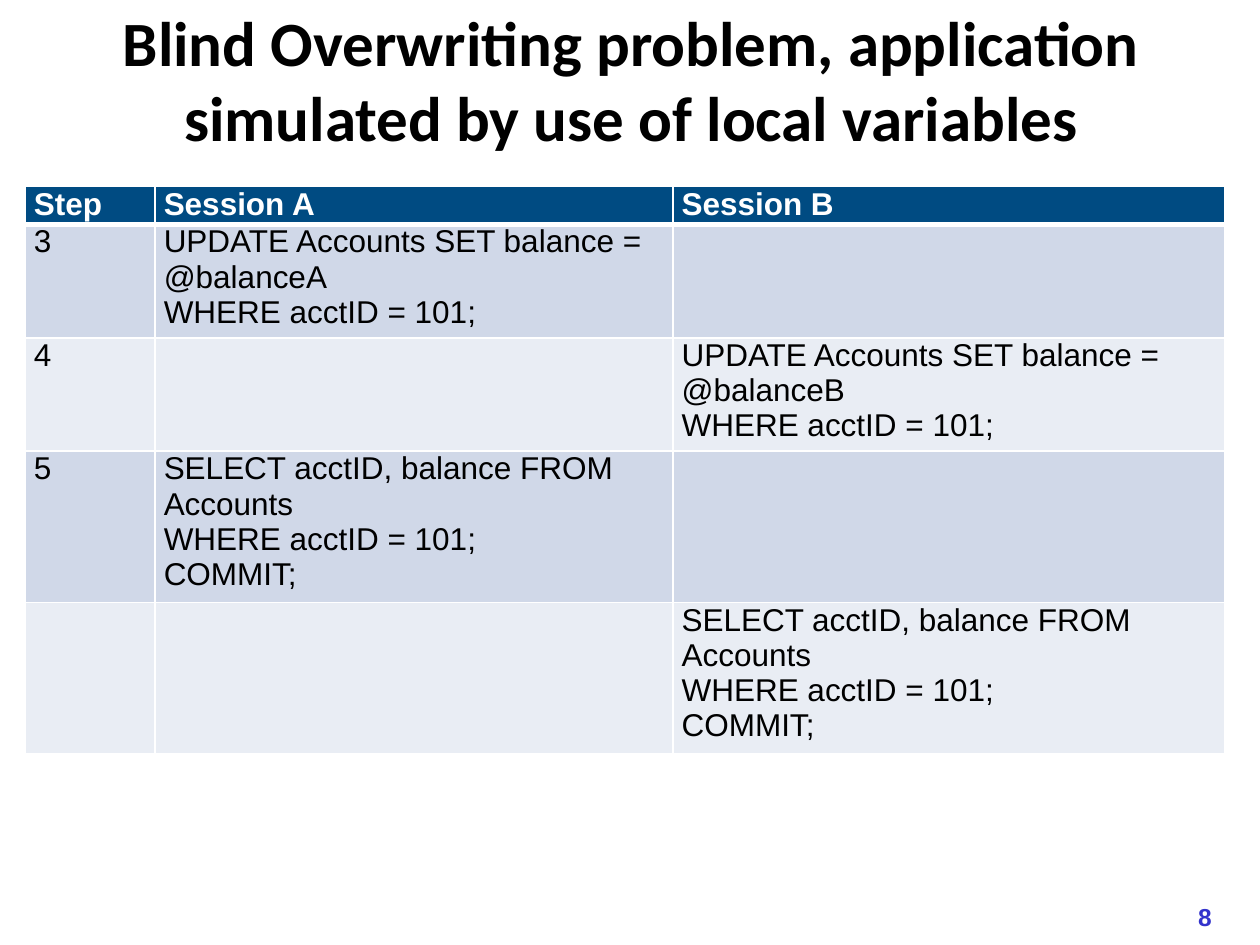
import pptx
import pptx.dml.color
import pptx.enum.text
import pptx.oxml.ns
import pptx.util
import lxml.etree

Inches = pptx.util.Inches
RGBColor = pptx.dml.color.RGBColor
Alignment = pptx.enum.text.PP_ALIGN

BLACK = RGBColor(0x00, 0x00, 0x00)
WHITE = RGBColor(0xFF, 0xFF, 0xFF)
NUMBER_BLUE = RGBColor(0x33, 0x33, 0xCC)
HEADER_BLUE = RGBColor(0x00, 0x4B, 0x82)
BAND_COLORS = (RGBColor(0xE9, 0xED, 0xF4), RGBColor(0xD0, 0xD8, 0xE8))

COLUMN_WIDTHS = (1.03, 4.11, 4.38)
LINE_HEIGHT = 0.28
ROW_LINES = (1, 3, 3, 4, 4)

UPDATE = "UPDATE Accounts SET balance = @balance{}\nWHERE acctID = 101;"
SELECT = "SELECT acctID, balance FROM Accounts\nWHERE acctID = 101;\nCOMMIT;"
ROWS = (
    ("Step", "Session A", "Session B"),
    ("3", UPDATE.format("A"), ""),
    ("4", "", UPDATE.format("B")),
    ("5", SELECT, ""),
    ("", "", SELECT),
)


def format_runs(paragraph, name, size, color, bold):
    for run in paragraph.runs:
        run.font.name = name
        run.font.size = pptx.util.Pt(size)
        run.font.color.rgb = color
        run.font.bold = bold


def set_box(shape, left, top, width, height):
    shape.left, shape.top = Inches(left), Inches(top)
    shape.width, shape.height = Inches(width), Inches(height)


def add_title(slide, box):
    title = slide.shapes.title
    set_box(title, *box)
    frame = title.text_frame
    frame.text = "Blind Overwriting problem, application simulated by use of local variables"
    frame.auto_size = pptx.enum.text.MSO_AUTO_SIZE.NONE
    frame.vertical_anchor = pptx.enum.text.MSO_ANCHOR.MIDDLE
    paragraph = frame.paragraphs[0]
    paragraph.alignment = Alignment.CENTER
    format_runs(paragraph, "Calibri", 36, BLACK, True)


def add_page_number(slide, box):
    frame = slide.shapes.add_textbox(*map(Inches, box)).text_frame
    frame.text = "8"
    frame.word_wrap = False
    frame.auto_size = pptx.enum.text.MSO_AUTO_SIZE.SHAPE_TO_FIT_TEXT
    format_runs(frame.paragraphs[0], "Arial", 14, NUMBER_BLUE, True)


def set_borders(cell, is_header):
    properties = cell._tc.get_or_add_tcPr()
    for position, side in enumerate("LRTB"):
        points = 3 if is_header and side == "B" else 1
        line = lxml.etree.Element(pptx.oxml.ns.qn("a:ln" + side), w=str(pptx.util.Pt(points)))
        fill = lxml.etree.SubElement(line, pptx.oxml.ns.qn("a:solidFill"))
        lxml.etree.SubElement(fill, pptx.oxml.ns.qn("a:srgbClr"), val=str(WHITE))
        properties.insert(position, line)


def fill_cell(cell, text, row_index):
    is_header = row_index == 0
    cell.margin_left = cell.margin_right = Inches(0.07)
    cell.margin_top = cell.margin_bottom = 0
    cell.fill.solid()
    cell.fill.fore_color.rgb = HEADER_BLUE if is_header else BAND_COLORS[row_index % 2]
    set_borders(cell, is_header)
    cell.text_frame.text = text
    paragraphs = cell.text_frame.paragraphs
    for paragraph in paragraphs:
        format_runs(paragraph, "Arial", 18, WHITE if is_header else BLACK, is_header)
    if text and not is_header:
        paragraphs[-1].alignment = Alignment.JUSTIFY


def add_session_table(slide, box):
    table = slide.shapes.add_table(len(ROWS), len(COLUMN_WIDTHS), *map(Inches, box)).table
    for column, width in zip(table.columns, COLUMN_WIDTHS):
        column.width = Inches(width)
    for row_index, (row, lines, texts) in enumerate(zip(table.rows, ROW_LINES, ROWS)):
        row.height = Inches(lines * LINE_HEIGHT)
        for cell, text in zip(row.cells, texts):
            fill_cell(cell, text, row_index)


def main():
    presentation = pptx.Presentation()
    presentation.slide_width = Inches(10)
    presentation.slide_height = Inches(7.5)
    slide = presentation.slides.add_slide(presentation.slide_layouts[5])
    add_page_number(slide, (9.41, 7.11, 0.31, 0.34))
    add_title(slide, (0.51, 0.13, 9, 0.99))
    add_session_table(slide, (0.2, 1.48, sum(COLUMN_WIDTHS), sum(ROW_LINES) * LINE_HEIGHT))
    presentation.save("out.pptx")


if __name__ == "__main__":
    main()
